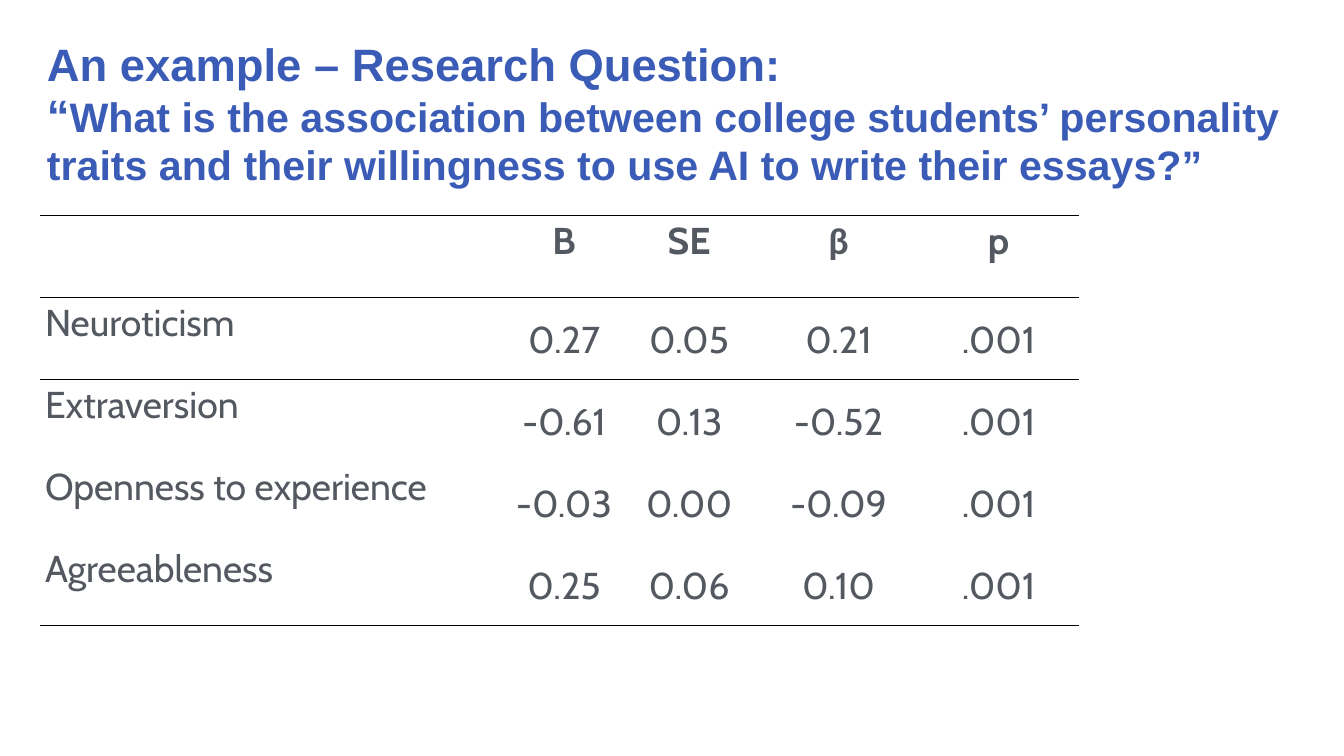
from lxml import etree
from pptx import Presentation, util as u
from pptx.dml.color import RGBColor
from pptx.enum import text
from pptx.oxml.ns import qn

TITLE = [
    ("An example – Research Question:", 48.6),
    ("“", 48.6),
    ("What is the association between college students’ personality traits "
     "and their willingness to use AI to write their essays?”", 44.1),
]
ROWS = [
    ("", "B", "SE", "β", "p"),
    ("Neuroticism", "0.27", "0.05", "0.21", ".001"),
    ("Extraversion", "-0.61", "0.13", "-0.52", ".001"),
    ("Openness to experience", "-0.03", "0.00", "-0.09", ".001"),
    ("Agreeableness", "0.25", "0.06", "0.10", ".001"),
]
COLS = [6.97, 1.65, 2.07, 2.38, 2.38]
ROW_H = 1.22
LEFT = 0.6
BLUE, GREY, BLACK = "3A5CB7", "545860", "000000"
NO_STYLE = "{2D5ABB26-0587-4C30-8999-92F81FD0307C}"


def color(value):
    return RGBColor.from_string(value)


def set_font(font, name, value, bold, size=None):
    font.name, font.bold = name, bold
    font.color.rgb = color(value)
    if size:
        font.size = u.Pt(size)


def add_border(cell, tag):
    ln = etree.SubElement(cell._tc.get_or_add_tcPr(), qn(tag), w=str(u.Pt(1)))
    fill = etree.SubElement(ln, qn("a:solidFill"))
    etree.SubElement(fill, qn("a:srgbClr"), val=BLACK)


def add_title(s):
    tf = s.shapes.add_textbox(*map(u.Inches, (LEFT, 0.14, 18.81, 3.14))).text_frame
    tf.word_wrap = True
    tf.vertical_anchor = text.MSO_ANCHOR.MIDDLE
    p = tf.paragraphs[0]
    p.line_spacing = 0.95
    set_font(p.font, "Arial", BLUE, True)
    for i, (words, size) in enumerate(TITLE):
        if i == 1:
            p.add_line_break()
        r = p.add_run()
        r.text = words
        r.font.size = u.Pt(size)


def fill_cell(cell, words, row, col):
    if row < 2:
        add_border(cell, "a:lnT")
    if row in (0, len(ROWS) - 1):
        add_border(cell, "a:lnB")
    cell.fill.background()
    if not words:
        return
    cell.margin_left = cell.margin_right = u.Inches(0.07)
    cell.margin_top = cell.margin_bottom = 0
    if row and col:
        cell.vertical_anchor = text.MSO_ANCHOR.MIDDLE
    p = cell.text_frame.paragraphs[0]
    p.text = words
    p.line_spacing, p.space_after = 1.07, u.Pt(8)
    if col:
        p.alignment = text.PP_ALIGN.CENTER
    set_font(p.font, "Calibri" if words == "β" else "Cabin", GREY, row == 0, 40)


def add_results(s):
    size = LEFT, 3.21, sum(COLS), ROW_H * len(ROWS)
    table = s.shapes.add_table(len(ROWS), len(COLS), *map(u.Inches, size)).table
    table.first_row = table.horz_banding = False
    table._tbl.tblPr.find(qn("a:tableStyleId")).text = NO_STYLE
    for column, width in zip(table.columns, COLS):
        column.width = u.Inches(width)
    for i, row in enumerate(ROWS):
        table.rows[i].height = u.Inches(ROW_H)
        for j, words in enumerate(row):
            fill_cell(table.cell(i, j), words, i, j)


def main():
    prs = Presentation()
    prs.slide_width, prs.slide_height = u.Inches(20), u.Inches(11.25)
    s = prs.slides.add_slide(prs.slide_layouts[6])
    add_title(s)
    add_results(s)
    prs.save("out.pptx")


if __name__ == "__main__":
    main()
